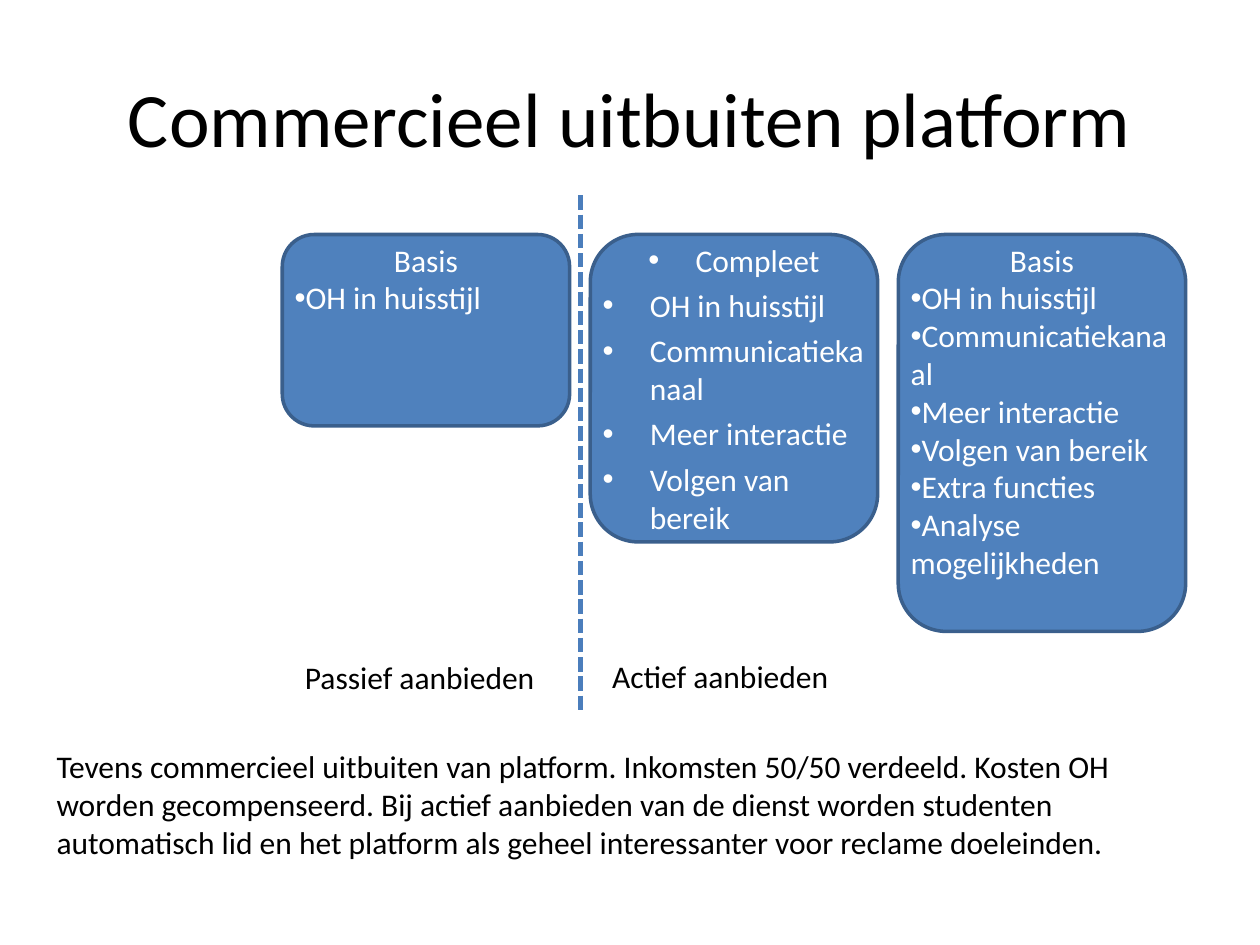
from lxml import etree
from pptx import Presentation
from pptx.dml.color import RGBColor
from pptx.enum.dml import MSO_LINE
from pptx.enum.shapes import MSO_CONNECTOR, MSO_SHAPE
from pptx.enum.text import MSO_ANCHOR, PP_ALIGN
from pptx.oxml.ns import qn
from pptx.util import Pt

BLACK = RGBColor(0x00, 0x00, 0x00)
WHITE = RGBColor(0xFF, 0xFF, 0xFF)
CARD_BLUE = RGBColor(0x4F, 0x81, 0xBD)
EDGE_BLUE = RGBColor(0x3A, 0x5F, 0x8C)
DASH_BLUE = RGBColor(0x4B, 0x7E, 0xBC)
ROUNDED = MSO_SHAPE.ROUNDED_RECTANGLE
STRAIGHT = MSO_CONNECTOR.STRAIGHT
DASHED = MSO_LINE.SQUARE_DOT
CENTER, LEFT = PP_ALIGN.CENTER, PP_ALIGN.LEFT
MIDDLE, TOP = MSO_ANCHOR.MIDDLE, MSO_ANCHOR.TOP
FONT = "Calibri"

CARD_LEFT, CARD_TOP = 161.3, 134
CARD_WIDTH, CARD_PITCH = 164.2, 176
FEATURES = ["OH in huisstijl", "Communicatiekanaal", "Meer interactie",
            "Volgen van bereik", "Extra functies", "Analyse mogelijkheden"]
# Heading, number of features, card height, text height, hanging indent
CARDS = [
    ("Basis", 1, 109.4, 51, 0),
    ("Compleet", 4, 175.7, 138, 27),
    ("Basis", 6, 226.8, 204, 0),
]
EXPLANATION = (
    "Tevens commercieel uitbuiten van platform. Inkomsten 50/50 verdeeld. "
    "Kosten OH worden gecompenseerd. Bij actief aanbieden van de dienst "
    "worden studenten automatisch lid en het platform als geheel "
    "interessanter voor reclame doeleinden."
)


def add_text(shapes, box, lines, size=18, color=BLACK, align=LEFT, anchor=TOP):
    """Add a text box with one paragraph for each line."""
    frame = shapes.add_textbox(*map(Pt, box)).text_frame
    frame.word_wrap = True
    frame.vertical_anchor = anchor
    frame.text = "\n".join(lines)
    for para in frame.paragraphs:
        para.alignment = align
        for span in para.runs:
            span.font.name = FONT
            span.font.size = Pt(size)
            span.font.color.rgb = color
    return frame


def add_bullet(para, indent):
    properties = para._p.get_or_add_pPr()
    properties.set("marL", str(Pt(indent)))
    properties.set("indent", str(-Pt(indent)))
    etree.SubElement(properties, qn("a:buFont")).set("typeface", "Arial")
    etree.SubElement(properties, qn("a:buChar")).set("char", "•")


def add_card(page, box, heading, features, text_height, indent):
    left, top, width, height = box
    group = page.shapes.add_group_shape()
    card = group.shapes.add_shape(ROUNDED, *map(Pt, box))
    card.shadow.inherit = False
    card.fill.solid()
    card.fill.fore_color.rgb = CARD_BLUE
    card.line.color.rgb = EDGE_BLUE
    card.line.width = Pt(2)

    frame = add_text(group.shapes, (left, top, width, text_height),
                     [heading, *features], color=WHITE)
    title, *items = frame.paragraphs
    title.alignment = CENTER
    for para in items:
        if indent:
            para.space_before = Pt(4.3)
        add_bullet(para, indent)
    # The indented card also has a bullet at its heading
    if indent:
        add_bullet(title, indent)


def add_divider(page, x, top, bottom):
    divider = page.shapes.add_connector(STRAIGHT, Pt(x), Pt(top), Pt(x), Pt(bottom))
    divider.line.color.rgb = DASH_BLUE
    divider.line.width = Pt(2.75)
    divider.line.dash_style = DASHED
    etree.SubElement(divider._element.spPr, qn("a:effectLst"))


def main():
    deck = Presentation()
    deck.slide_width, deck.slide_height = Pt(720), Pt(540)
    page = deck.slides.add_slide(deck.slide_layouts[6])

    # Title
    add_text(page.shapes, (36, 21.6, 648, 90), ["Commercieel uitbuiten platform"],
             size=44, align=CENTER, anchor=MIDDLE)

    # Package cards
    for column, (heading, count, height, text_height, indent) in enumerate(CARDS):
        box = (CARD_LEFT + column * CARD_PITCH, CARD_TOP, CARD_WIDTH, height)
        add_card(page, box, heading, FEATURES[:count], text_height, indent)

    # Passive and active sides
    add_divider(page, 331.9, 111.6, 406)
    add_text(page.shapes, (167.2, 372.4, 153.4, 29), ["Passief aanbieden"])
    add_text(page.shapes, (342.7, 371.7, 153.4, 29), ["Actief aanbieden"])

    # Explanation
    add_text(page.shapes, (25.2, 423.4, 669, 72.7), [EXPLANATION])

    deck.save("out.pptx")


if __name__ == "__main__":
    main()
